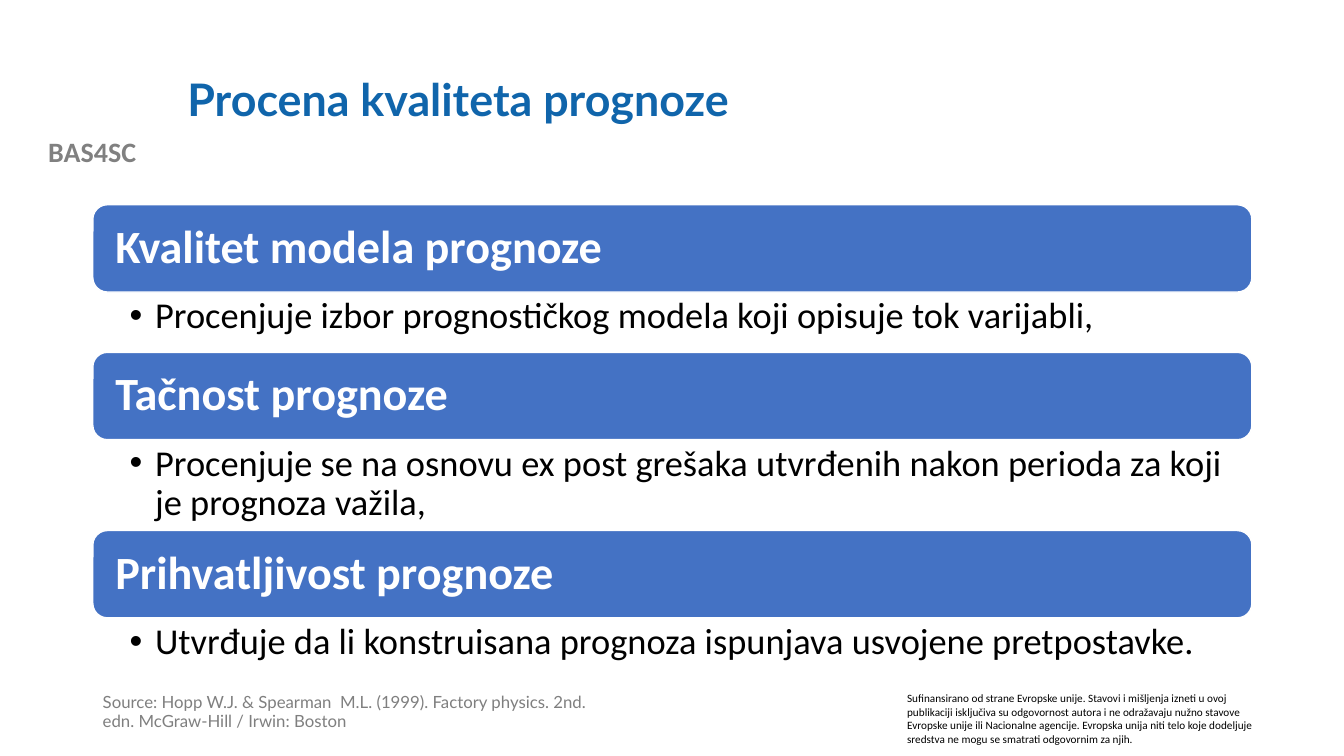
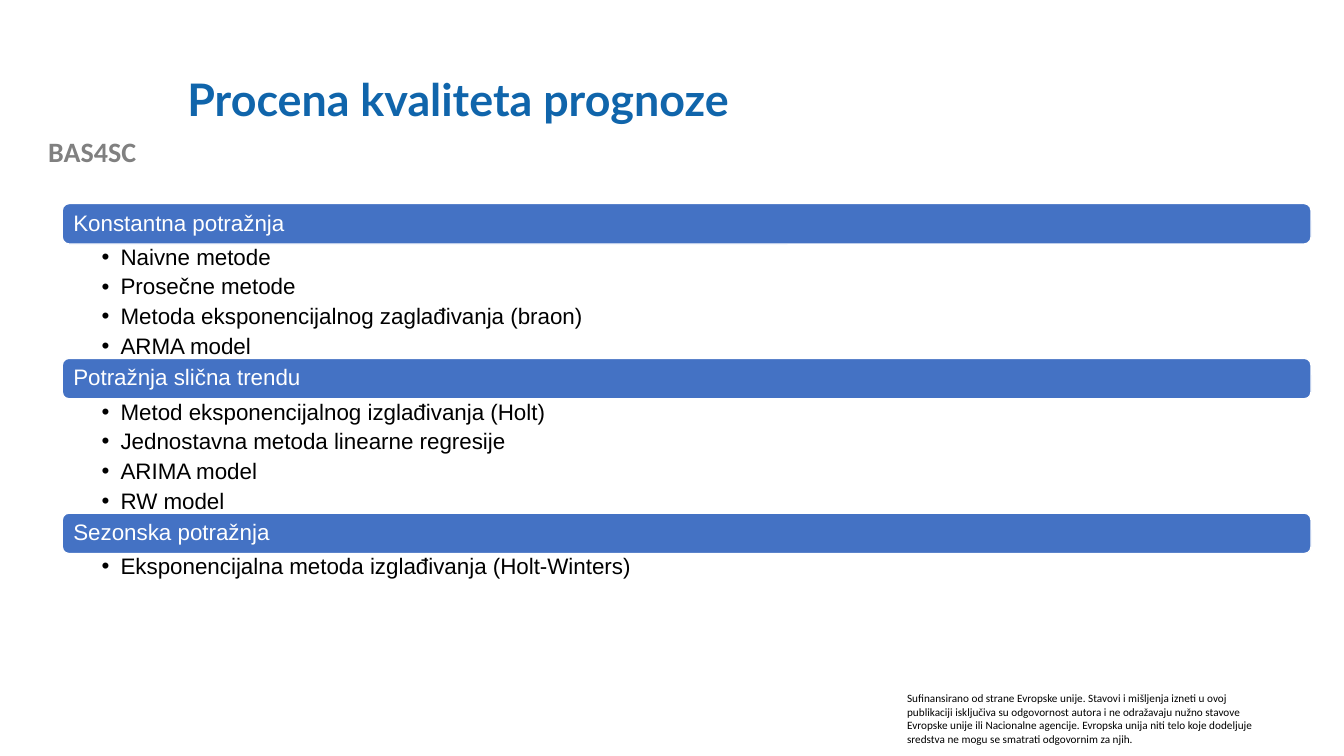
from lxml import etree
from pptx import Presentation
from pptx.dml.color import RGBColor
from pptx.enum.shapes import MSO_SHAPE
from pptx.enum.text import MSO_ANCHOR, MSO_AUTO_SIZE, PP_ALIGN
from pptx.oxml.ns import qn
from pptx.util import Cm, Pt

ROUNDED = MSO_SHAPE.ROUNDED_RECTANGLE
TOP, MIDDLE = MSO_ANCHOR.TOP, MSO_ANCHOR.MIDDLE
LEFT, CENTER = PP_ALIGN.LEFT, PP_ALIGN.CENTER
NO_FIT = MSO_AUTO_SIZE.NONE
TITLE_ONLY = 5

BLUE, BAND, WHITE, BLACK = "1065AB", "4472C4", "FFFFFF", "000000"
GRAY, SOURCE_GRAY = "808080", "7F7F7F"

PROJECT = "BAS4SC"
DISCLAIMER = (
    "Sufinansirano od strane Evropske unije. Stavovi i mišljenja izneti u ovoj "
    "publikaciji isključiva su odgovornost autora i ne odražavaju nužno stavove "
    "Evropske unije ili Nacionalne agencije. Evropska unija niti telo koje dodeljuje "
    "sredstva ne mogu se smatrati odgovornim za njih."
)

SLIDES = [
    {
        "title": "Procena kvaliteta prognoze",
        "source": "Source: Hopp W.J. & Spearman  M.L. (1999). Factory physics. 2nd. edn. "
                  "McGraw-Hill / Irwin: Boston",
        "style": {
            "left": 2.34, "top": 5.16, "width": 29.21, "band": 2.2,
            "line": 0.77, "pad": 0.75, "font": "Calibri", "bold": True,
            "head_size": 33, "body_size": 26, "head_inset": 0.46,
            "body_insets": (0.93, 0.13, 0.66, 0.13), "indent": 0.64, "after": 5,
        },
        "sections": [
            ("Kvalitet modela prognoze", 1,
             ["Procenjuje izbor prognostičkog modela koji opisuje tok varijabli,"]),
            ("Tačnost prognoze", 2,
             ["Procenjuje se na osnovu ex post grešaka utvrđenih nakon perioda za koji "
              "je prognoza važila,"]),
            ("Prihvatljivost prognoze", 1,
             ["Utvrđuje da li konstruisana prognoza ispunjava usvojene pretpostavke."]),
        ],
    },
    {
        "title": "Procena kvaliteta prognoze",
        "source": None,
        "style": {
            "left": 1.57, "top": 5.13, "width": 31.47, "band": 1.02,
            "line": 0.72, "pad": 0, "font": "Arial", "bold": False,
            "head_size": 16, "body_size": 16, "head_inset": 0.23,
            "body_insets": (0.99, 0.05, 0.3, 0.05), "indent": 0.48, "after": 3.9,
        },
        "sections": [
            ("Konstantna potražnja", 4,
             ["Naivne metode", "Prosečne metode",
              "Metoda eksponencijalnog zaglađivanja (braon)", "ARMA model"]),
            ("Potražnja slična trendu", 4,
             ["Metod eksponencijalnog izglađivanja (Holt)",
              "Jednostavna metoda linearne regresije", "ARIMA model", "RW model"]),
            ("Sezonska potražnja", 1,
             ["Eksponencijalna metoda izglađivanja (Holt-Winters)"]),
        ],
    },
]


def rgb(color):
    return RGBColor.from_string(color)


def place(shape, left, top, width, height):
    shape.left, shape.top = Cm(left), Cm(top)
    shape.width, shape.height = Cm(width), Cm(height)


def write(shape, lines, font, size, color, bold=False, align=LEFT, anchor=TOP,
          insets=(0.25, 0.13, 0.25, 0.13), spacing=0.9, after=0, indent=0):
    tf = shape.text_frame
    tf.text = "\n".join(lines)
    tf.word_wrap = True
    tf.auto_size = NO_FIT
    tf.vertical_anchor = anchor
    tf.margin_left, tf.margin_top, tf.margin_right, tf.margin_bottom = map(Cm, insets)
    for p in tf.paragraphs:
        p.alignment = align
        p.line_spacing = spacing
        p.space_after = Pt(after)
        if indent:
            add_bullet(p, indent)
        for r in p.runs:
            r.font.name = font
            r.font.size = Pt(size)
            r.font.bold = bold
            r.font.color.rgb = rgb(color)


def add_bullet(p, indent):
    p.level = 1
    pPr = p._p.get_or_add_pPr()
    pPr.set("marL", str(Cm(indent)))
    pPr.set("indent", str(-Cm(indent)))
    etree.SubElement(pPr, qn("a:buFont")).set("typeface", "Arial")
    etree.SubElement(pPr, qn("a:buChar")).set("char", "•")


def add_text(s, box, lines, *args, **options):
    write(s.shapes.add_textbox(*map(Cm, box)), lines, *args, **options)


def add_band(s, box, heading, style):
    sp = s.shapes.add_shape(ROUNDED, *map(Cm, box))
    sp.shadow.inherit = False
    sp.fill.solid()
    sp.fill.fore_color.rgb = rgb(BAND)
    sp.line.color.rgb = rgb(WHITE)
    sp.line.width = Pt(1)
    inset = style["head_inset"]
    write(sp, [heading], style["font"], style["head_size"], WHITE, style["bold"],
          anchor=MIDDLE, insets=(inset, 0, inset, 0))


def add_sections(s, sections, style):
    left, top, width, band = (style[k] for k in ("left", "top", "width", "band"))
    for heading, line_count, bullets in sections:
        add_band(s, (left, top, width, band), heading, style)
        top += band
        height = style["pad"] + line_count * style["line"]
        add_text(s, (left, top, width, height), bullets, style["font"],
                 style["body_size"], BLACK, insets=style["body_insets"],
                 after=style["after"], indent=style["indent"])
        top += height


def add_frame(prs, title):
    s = prs.slides.add_slide(prs.slide_layouts[TITLE_ONLY])
    place(s.shapes.title, 4.47, 1.02, 27.08, 3.1)
    write(s.shapes.title, [title], "Lato", 32, BLUE, True, anchor=MIDDLE)
    add_text(s, (0, 3.25, 4.65, 1.12), [PROJECT], "Calibri", 20, GRAY, True,
             align=CENTER, spacing=1.0)
    add_text(s, (22.61, 17.3, 9.4, 1.63), [DISCLAIMER], "Calibri", 8, BLACK, spacing=1.0)
    return s


def main():
    prs = Presentation()
    prs.slide_width, prs.slide_height = Cm(33.87), Cm(19.05)
    for content in SLIDES:
        s = add_frame(prs, content["title"])
        add_sections(s, content["sections"], content["style"])
        if content["source"]:
            add_text(s, (2.34, 17.37, 12.73, 1.32), [content["source"]],
                     "Lato", 12, SOURCE_GRAY)
    prs.save("out.pptx")


if __name__ == "__main__":
    main()
